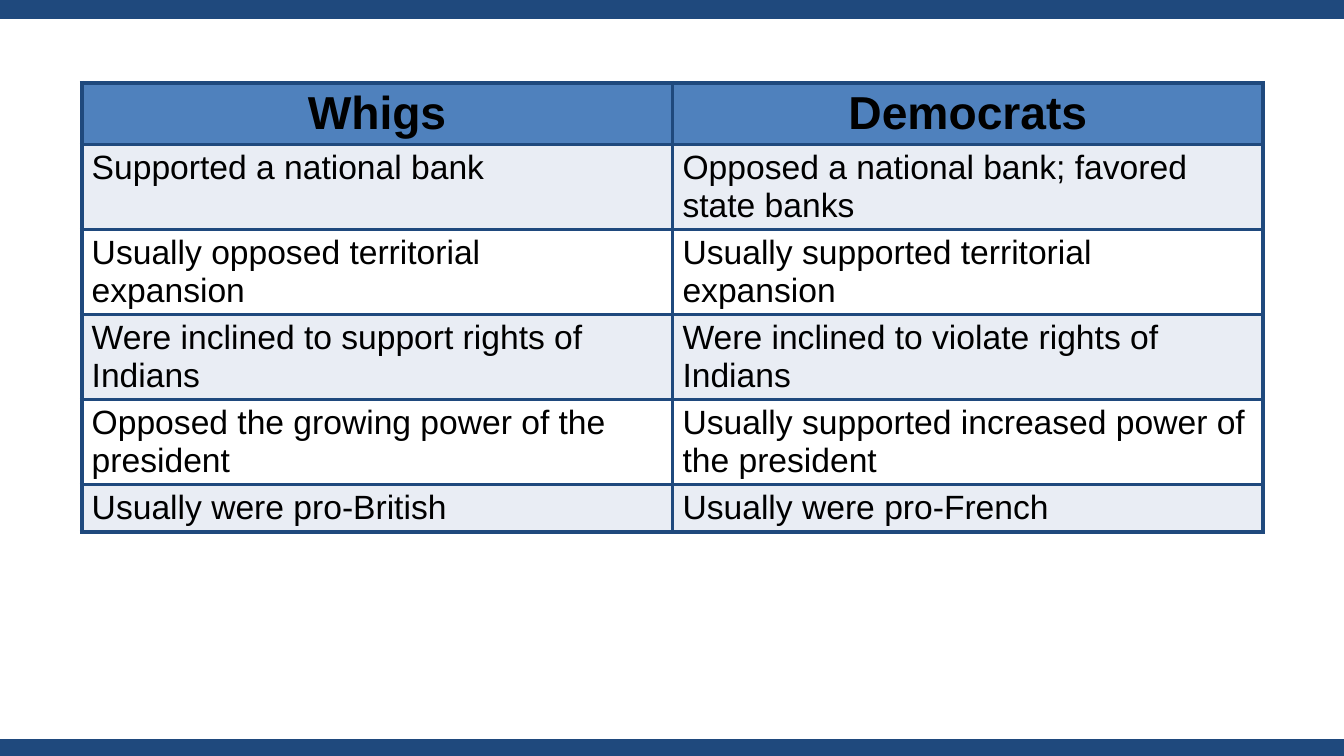
"""Builds a slide comparing Whig and Democrat positions in a two-column table."""
from dataclasses import dataclass

from lxml import etree
from pptx import Presentation
from pptx.dml.color import RGBColor
from pptx.enum.shapes import MSO_SHAPE
from pptx.enum.text import MSO_ANCHOR, PP_ALIGN
from pptx.oxml.ns import qn
from pptx.util import Inches, Pt

RECTANGLE = MSO_SHAPE.RECTANGLE
CENTER, LEFT = PP_ALIGN.CENTER, PP_ALIGN.LEFT
MIDDLE, TOP = MSO_ANCHOR.MIDDLE, MSO_ANCHOR.TOP

SLIDE_WIDTH, SLIDE_HEIGHT = 13.33, 7.5
POSITIONS = [
    ("Whigs", "Democrats"),
    ("Supported a national bank", "Opposed a national bank; favored state banks"),
    ("Usually opposed territorial\nexpansion", "Usually supported territorial\nexpansion"),
    ("Were inclined to support rights of Indians", "Were inclined to violate rights of Indians"),
    ("Opposed the growing power of the president", "Usually supported increased power of the president"),
    ("Usually were pro-British", "Usually were pro-French"),
]
ROW_HEIGHTS = [0.48, 0.66, 0.66, 0.66, 0.66, 0.37]


@dataclass(frozen=True)
class Theme:
    font: str = "Arial"
    navy: str = "1F497D"
    header: str = "4F81BD"
    band: str = "E9EDF4"
    paper: str = "FFFFFF"
    ink: str = "000000"
    header_size: int = 33
    body_size: int = 24
    border: int = 3


class PartyPage:
    def __init__(self, deck, theme):
        self.theme = theme
        self.width, self.height = deck.slide_width, deck.slide_height
        self.page = deck.slides.add_slide(deck.slide_layouts[6])

    def background(self, color):
        fill = self.page.background.fill
        fill.solid()
        fill.fore_color.rgb = RGBColor.from_string(color)

    def panel(self, top, height, color):
        panel = self.page.shapes.add_shape(
            RECTANGLE, 0, int(self.height * top), self.width, int(self.height * height))
        panel.shadow.inherit = False
        panel.fill.solid()
        panel.fill.fore_color.rgb = RGBColor.from_string(color)
        panel.line.fill.background()

    def table(self, left, top, width, rows, row_heights):
        frame = self.page.shapes.add_table(
            len(rows), len(rows[0]), int(self.width * left), int(self.height * top),
            int(self.width * width), Inches(sum(row_heights)))
        table = frame.table
        for row_index, (texts, height) in enumerate(zip(rows, row_heights)):
            table.rows[row_index].height = Inches(height)
            for column_index, text in enumerate(texts):
                self.cell(table.cell(row_index, column_index), text, row_index)

    def cell(self, cell, text, row_index):
        theme = self.theme
        is_header = row_index == 0
        color = theme.header if is_header else theme.band if row_index % 2 else theme.paper
        self.borders(cell)
        cell.fill.solid()
        cell.fill.fore_color.rgb = RGBColor.from_string(color)
        cell.vertical_anchor = MIDDLE if is_header else TOP
        cell.text_frame.text = text
        for paragraph in cell.text_frame.paragraphs:
            paragraph.alignment = CENTER if is_header else LEFT
            for span in paragraph.runs:
                span.font.name = theme.font
                span.font.size = Pt(theme.header_size if is_header else theme.body_size)
                span.font.bold = is_header
                span.font.color.rgb = RGBColor.from_string(theme.ink)

    def borders(self, cell):
        properties = cell._tc.get_or_add_tcPr()
        for side in ("a:lnL", "a:lnR", "a:lnT", "a:lnB"):
            line = etree.SubElement(properties, qn(side), w=str(Pt(self.theme.border)))
            fill = etree.SubElement(line, qn("a:solidFill"))
            etree.SubElement(fill, qn("a:srgbClr"), val=self.theme.navy)


def main():
    deck = Presentation()
    deck.slide_width, deck.slide_height = Inches(SLIDE_WIDTH), Inches(SLIDE_HEIGHT)
    theme = Theme()
    page = PartyPage(deck, theme)
    page.background(theme.navy)
    page.panel(0.19 / SLIDE_HEIGHT, 7.14 / SLIDE_HEIGHT, theme.paper)
    page.table(0.81 / SLIDE_WIDTH, 0.82 / SLIDE_HEIGHT, 11.72 / SLIDE_WIDTH, POSITIONS, ROW_HEIGHTS)
    deck.save("out.pptx")


if __name__ == "__main__":
    main()
